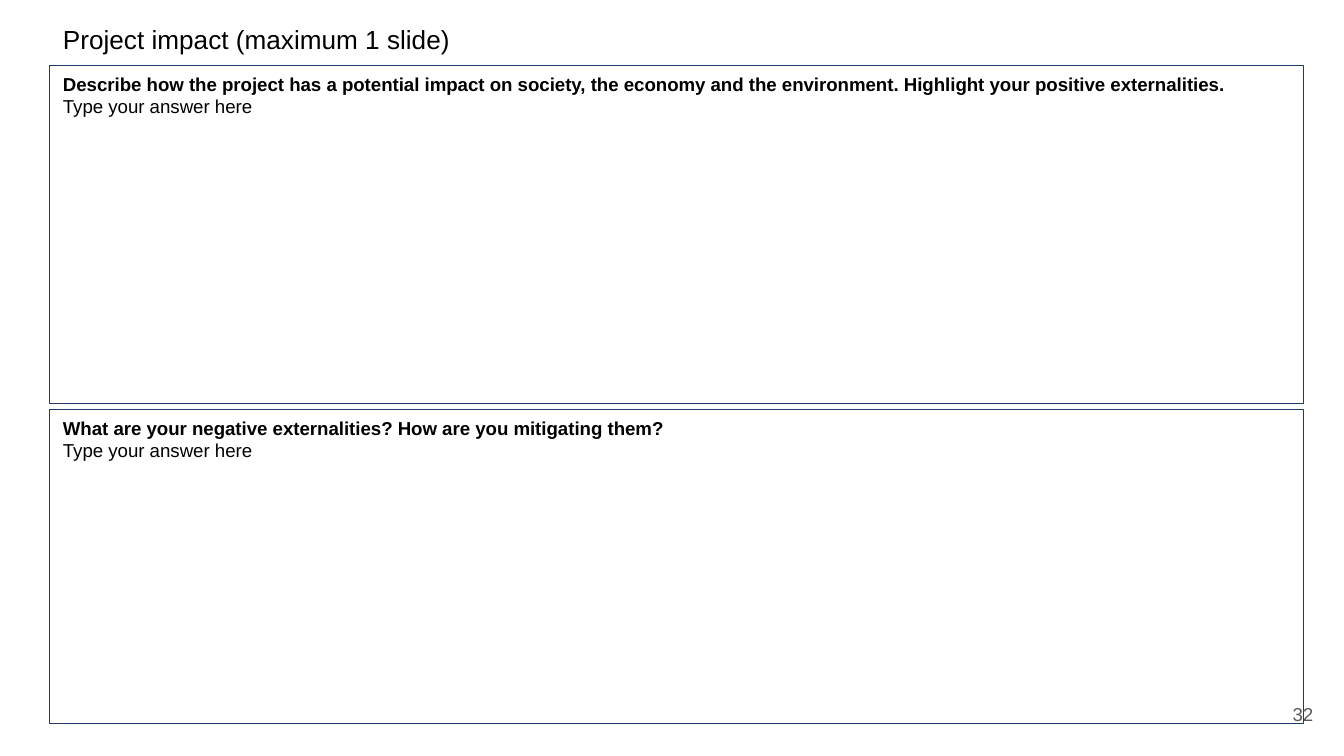
import pptx
import pptx.dml.color
import pptx.enum.shapes
import pptx.enum.text
import pptx.util

Cm = pptx.util.Cm
ALIGN = pptx.enum.text.PP_ALIGN
ANCHOR = pptx.enum.text.MSO_ANCHOR

BLACK = pptx.dml.color.RGBColor(0x00, 0x00, 0x00)
GREY = pptx.dml.color.RGBColor(0x59, 0x59, 0x59)
NAVY = pptx.dml.color.RGBColor(0x1D, 0x3A, 0x6B)

LEFT, WIDTH = 0.94, 23.7
ANSWER = "Type your answer here"
QUESTIONS = [
    ("Describe how the project has a potential impact on society, the economy "
     "and the environment. Highlight your positive externalities.", 1.24, 6.38),
    ("What are your negative externalities? How are you mitigating them?", 7.75, 5.92),
]


def style_paragraph(paragraph, size, color, bold=False, align=ALIGN.LEFT):
    paragraph.alignment = align
    for run in paragraph.runs:
        run.font.name = "Arial"
        run.font.size = pptx.util.Pt(size)
        run.font.bold = bold
        run.font.color.rgb = color


def set_frame(frame, anchor, vertical_inset):
    frame.word_wrap = True
    frame.vertical_anchor = anchor
    frame.margin_left = frame.margin_right = Cm(0.25)
    frame.margin_top = frame.margin_bottom = Cm(vertical_inset)


def add_label(slide, box, text, size, color, align=ALIGN.LEFT):
    label = slide.shapes.add_textbox(*map(Cm, box))
    set_frame(label.text_frame, ANCHOR.MIDDLE, 0.25)
    label.text_frame.text = text
    style_paragraph(label.text_frame.paragraphs[0], size, color, align=align)


def add_question(slide, box, question):
    panel = slide.shapes.add_shape(
        pptx.enum.shapes.MSO_SHAPE.RECTANGLE, *map(Cm, box))
    panel.shadow.inherit = False
    panel.fill.background()
    panel.line.color.rgb = NAVY
    panel.line.width = pptx.util.Pt(0.5)
    set_frame(panel.text_frame, ANCHOR.TOP, 0.13)
    panel.text_frame.text = f"{question}\n{ANSWER}"
    prompt, answer = panel.text_frame.paragraphs
    style_paragraph(prompt, 10, BLACK, bold=True)
    style_paragraph(answer, 10, BLACK)


def main():
    deck = pptx.Presentation()
    deck.slide_width, deck.slide_height = Cm(25.4), Cm(14.29)
    slide = deck.slides.add_slide(deck.slide_layouts[6])
    add_label(slide, (LEFT, 0.36, WIDTH, 0.74),
              "Project impact (maximum 1 slide)", 14, BLACK)
    add_label(slide, (23.55, 12.95, 1.52, 1.09), "32", 10, GREY, ALIGN.RIGHT)
    for question, top, height in QUESTIONS:
        add_question(slide, (LEFT, top, WIDTH, height), question)
    deck.save("out.pptx")


if __name__ == "__main__":
    main()
